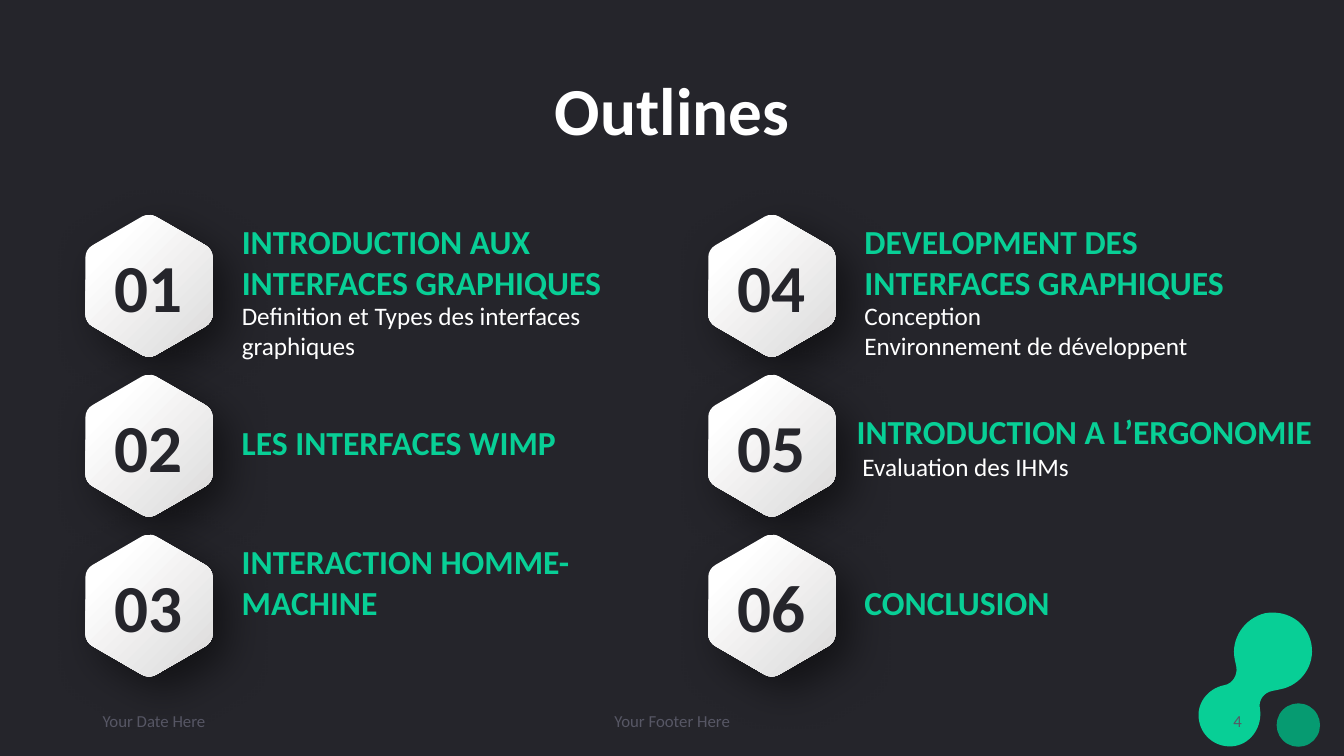
"""Build the outline slide with six numbered topics."""
import pptx
import pptx.dml.color
import pptx.enum.shapes
import pptx.enum.text
import pptx.oxml
import pptx.oxml.ns
import pptx.util

Pt = pptx.util.Pt
RGBColor = pptx.dml.color.RGBColor
ALIGN = pptx.enum.text.PP_ALIGN
ANCHOR = pptx.enum.text.MSO_ANCHOR
qn = pptx.oxml.ns.qn

DARK = RGBColor(0x25, 0x25, 0x2B)
WHITE = RGBColor(0xFF, 0xFF, 0xFF)
SILVER = RGBColor(0xDA, 0xD9, 0xD9)
GREEN = RGBColor(0x08, 0xCF, 0x96)
DEEP_GREEN = RGBColor(0x06, 0x9B, 0x71)
GREY = RGBColor(0x57, 0x57, 0x65)

TITLE_FONT = {"name": "Calibri", "size": Pt(48), "bold": True}
HEADING_FONT = {"name": "Calibri", "size": Pt(24), "bold": True}
DETAIL_FONT = {"name": "Calibri", "size": Pt(18), "bold": False}
FOOTER_FONT = {"name": "Calibri", "size": Pt(12), "bold": False}

MIDDLE = {"vertical_anchor": ANCHOR.MIDDLE, "word_wrap": True}
HEADING_FRAME = {"vertical_anchor": ANCHOR.BOTTOM, "word_wrap": True,
                 "margin_top": Pt(14.4), "margin_bottom": 0}
DETAIL_FRAME = {"vertical_anchor": ANCHOR.TOP, "word_wrap": True,
                "margin_top": 0, "margin_bottom": 0}
BADGE_FRAME = {**MIDDLE, "margin_left": Pt(4.3), "margin_right": Pt(4.3),
               "margin_top": Pt(2.2), "margin_bottom": Pt(2.2)}

BADGE_LEFTS = (61, 505.9)
BADGE_TOP, BADGE_STEP = 153.4, 114.2

HEADINGS = (
    ("INTRODUCTION AUX INTERFACES GRAPHIQUES", (165.6, 114.2, 291.6, 101.5)),
    ("LES INTERFACES WIMP", (165.6, 286.2, 261.4, 43.9)),
    ("INTERACTION HOMME-MACHINE", (165.6, 371.5, 280, 72.7)),
    ("DEVELOPMENT DES INTERFACES GRAPHIQUES", (610.4, 142.9, 331.2, 72.7)),
    ("INTRODUCTION A L’ERGONOMIE", (604.8, 278.5, 350, 43.9)),
    ("CONCLUSION", (610.4, 400.3, 261.4, 43.9)),
)
DETAILS = (
    (("Definition et Types des interfaces graphiques",), (165.6, 214.6, 291.6, 43.9)),
    (("Conception", "Environnement de développent"), (610.4, 214.6, 311.8, 43.9)),
    (("Evaluation des IHMs",), (608.9, 322.2, 311.8, 21.6)),
)
FOOTERS = (
    ("Your Date Here", 66.2, 216, ALIGN.LEFT),
    ("Your Footer Here", 318.2, 324, ALIGN.CENTER),
    ("4", 678.2, 216, ALIGN.RIGHT),
)
HEXAGON_START = (45.4, 0)
HEXAGON_SEGMENTS = (
    ((47.1, 0), (48.8, 0.4), (50.4, 1.3)),
    ((85.6, 21.7),),
    ((88.8, 23.5), (90.8, 26.9), (90.8, 30.5)),
    ((90.8, 71),),
    ((90.8, 74.6), (88.8, 78), (85.6, 79.8)),
    ((50.4, 100.1),),
    ((47.2, 101.8), (43.6, 101.8), (40.4, 100.1)),
    ((5.2, 79.8),),
    ((2, 78), (0, 74.6), (0, 71)),
    ((0, 30.5),),
    ((0, 26.9), (2, 23.5), (5.2, 21.7)),
    ((40.4, 1.3),),
    ((42, 0.4), (43.7, 0), HEXAGON_START),
)
BLOB_START = (936.8, 460.2)
BLOB_SEGMENTS = (
    ((939.5, 475.2), (929.4, 489.6), (914.4, 492.4)),
    ((908.6, 493.6),),
    ((902.9, 494.7), (898.7, 500.3), (900, 506.2)),
    ((902, 518.4), (894.2, 530.6), (882.5, 532.8)),
    ((870.3, 535), (858.8, 527), (856.6, 515.2)),
    ((854, 503), (862.5, 491.8), (874.6, 489.4)),
    ((880.4, 488.4), (884, 482.4), (883.2, 476.6)),
    ((882, 470.9),),
    ((879, 456.3), (889, 441.5), (903.8, 438)),
    ((905.6, 437.6), (907.6, 437.6), (909.4, 437.6)),
    ((923.2, 437.6), (934.4, 447), BLOB_START),
)
SHADOW_XML = (
    f'<a:outerShdw {pptx.oxml.ns.nsdecls("a")} blurRad="{Pt(30)}" dist="{Pt(14)}" '
    'dir="2700000" algn="tl" rotWithShape="0">'
    '<a:srgbClr val="000000"><a:alpha val="50000"/></a:srgbClr></a:outerShdw>'
)


def apply_format(target, values):
    """Set every attribute named in values on target."""
    for attribute, value in values.items():
        setattr(target, attribute, value)


def write_text(frame, lines, frame_format, font_format, color, paragraph_format):
    """Fill a text frame with one paragraph per line."""
    apply_format(frame, frame_format)
    frame.text = "\n".join(lines)
    for paragraph in frame.paragraphs:
        apply_format(paragraph, paragraph_format)
        apply_format(paragraph.font, font_format)
        paragraph.font.color.rgb = color


def add_text(slide, lines, box, frame_format, font_format, color, **paragraph_format):
    """Add a text box at the box given in points."""
    label = slide.shapes.add_textbox(*map(Pt, box))
    write_text(label.text_frame, lines, frame_format, font_format, color, paragraph_format)


def add_outline(slide, start, segments, left=0, top=0):
    """Add a closed outline of lines (one point) and cubic curves (three points)."""
    builder = slide.shapes.build_freeform(Pt(left + start[0]), Pt(top + start[1]))
    builder.add_line_segments([(Pt(left + x), Pt(top + y))
                               for segment in segments for x, y in segment])
    outline = builder.convert_to_shape()
    contour = next(outline._element.iter(qn("a:path")))
    strokes = iter(contour.findall(qn("a:lnTo")))
    for segment in segments:
        curve, *extras = [next(strokes) for _ in segment]
        if extras:
            curve.tag = qn("a:cubicBezTo")
        for extra in extras:
            curve.append(extra[0])
            contour.remove(extra)
    outline.line.fill.background()
    outline.shadow.inherit = False
    return outline


def add_badge(slide, number, left, top):
    """Add a numbered hexagon with gradient and soft shadow."""
    badge = add_outline(slide, HEXAGON_START, HEXAGON_SEGMENTS, left, top)
    badge.fill.gradient()
    badge.fill.gradient_angle = 315
    for stop, position, color in zip(badge.fill.gradient_stops, (0.2, 1), (WHITE, SILVER)):
        stop.position = position
        stop.color.rgb = color
    effects = badge._element.spPr.find(qn("a:effectLst"))
    effects.append(pptx.oxml.parse_xml(SHADOW_XML))
    write_text(badge.text_frame, [f"{number:02}"], BADGE_FRAME, TITLE_FONT, DARK,
               {"alignment": ALIGN.CENTER})


def add_decoration(slide):
    """Add the green blob and the small disc in the lower right corner."""
    blob = add_outline(slide, BLOB_START, BLOB_SEGMENTS)
    disc = slide.shapes.add_shape(pptx.enum.shapes.MSO_SHAPE.OVAL,
                                  Pt(911.9), Pt(502.4), Pt(31), Pt(31))
    disc.shadow.inherit = False
    disc.line.fill.background()
    for part, color in ((blob, GREEN), (disc, DEEP_GREEN)):
        part.fill.solid()
        part.fill.fore_color.rgb = color


def main():
    """Build the slide and save it."""
    deck = pptx.Presentation()
    apply_format(deck, {"slide_width": Pt(960), "slide_height": Pt(540)})
    slide = deck.slides.add_slide(deck.slide_layouts[6])
    slide.background.fill.solid()
    slide.background.fill.fore_color.rgb = DARK

    add_decoration(slide)
    add_text(slide, ["Outlines"], (66.2, 28.8, 828, 104.4), MIDDLE, TITLE_FONT, WHITE,
             alignment=ALIGN.CENTER, line_spacing=0.9)
    for text, left, width, alignment in FOOTERS:
        add_text(slide, [text], (left, 500.4, width, 28.8), MIDDLE, FOOTER_FONT, GREY,
                 alignment=alignment)
    for index, (heading, box) in enumerate(HEADINGS):
        column, row = divmod(index, 3)
        add_badge(slide, index + 1, BADGE_LEFTS[column], BADGE_TOP + row * BADGE_STEP)
        add_text(slide, [heading], box, HEADING_FRAME, HEADING_FONT, GREEN)
    for lines, box in DETAILS:
        add_text(slide, lines, box, DETAIL_FRAME, DETAIL_FONT, WHITE)
    deck.save("out.pptx")


if __name__ == "__main__":
    main()
